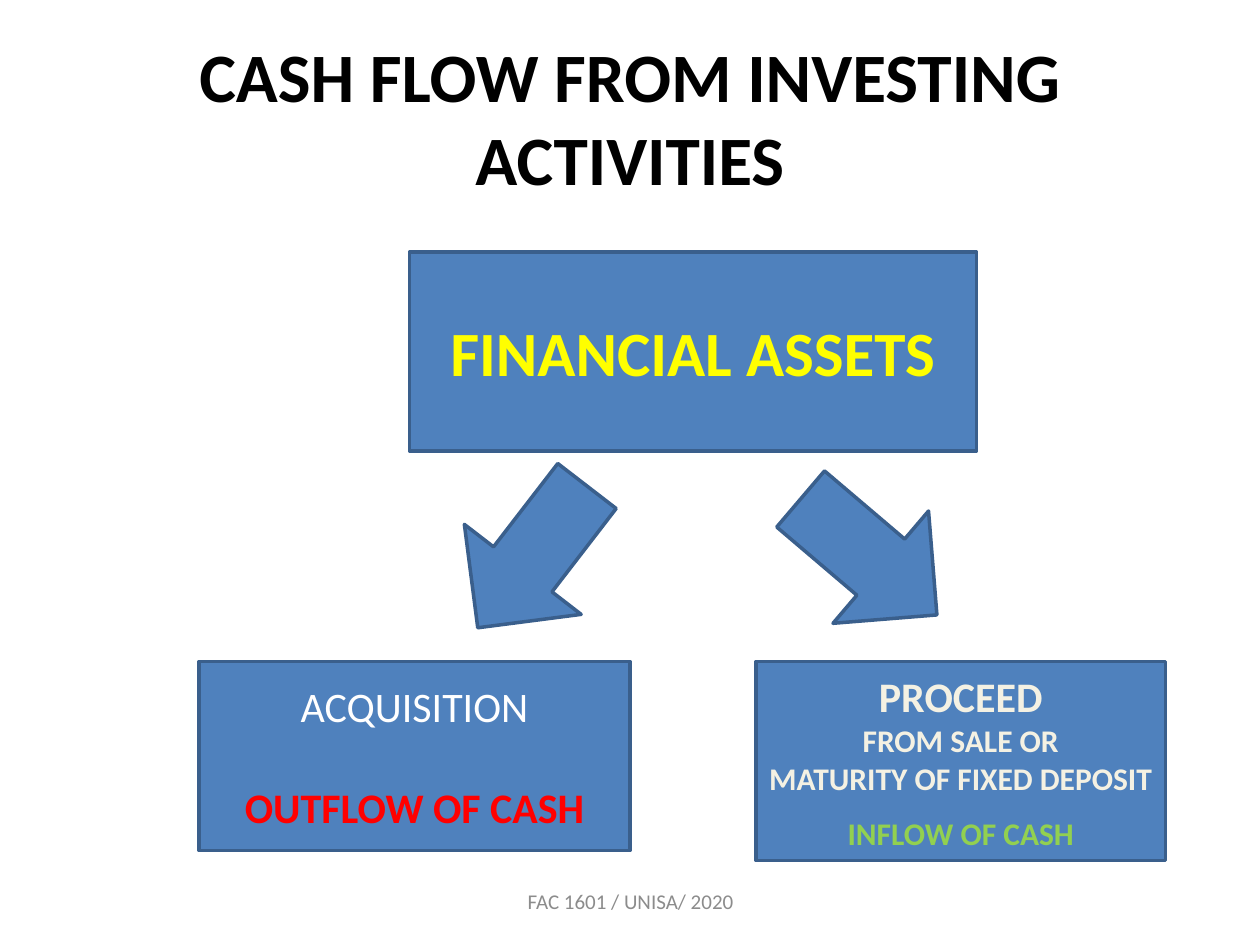
import pptx
import pptx.util
import pptx.dml.color
import pptx.enum.shapes
import pptx.enum.text

Inches = pptx.util.Inches
Pt = pptx.util.Pt
Shape = pptx.enum.shapes.MSO_SHAPE

COLORS = {
    "black": "000000",
    "grey": "8C8C8C",
    "blue": "4F81BD",
    "edge": "3A5F8C",
    "yellow": "FFFF00",
    "white": "FFFFFF",
    "cream": "F4F1E3",
    "red": "FF0000",
    "green": "92D050",
}


class SlideBuilder:
    """Holds the style and the current slide, and adds each kind of element."""

    font_name = "Calibri"
    line_width = Pt(2)

    def __init__(self, page):
        self.page = page

    def color(self, name):
        return pptx.dml.color.RGBColor.from_string(COLORS[name])

    def fill_text(self, shape, lines, inset=0.1):
        frame = shape.text_frame
        frame.word_wrap = True
        frame.vertical_anchor = pptx.enum.text.MSO_ANCHOR.MIDDLE
        frame.margin_left = frame.margin_right = Inches(inset)
        for index, (text, size, color, bold, space) in enumerate(lines):
            para = frame.add_paragraph() if index else frame.paragraphs[0]
            para.text = text
            para.alignment = pptx.enum.text.PP_ALIGN.CENTER
            if space:
                para.space_before = Pt(space)
            para.font.name = self.font_name
            para.font.size = Pt(size)
            para.font.bold = bold
            para.font.color.rgb = self.color(color)

    def text(self, place, *lines):
        box = self.page.shapes.add_textbox(*map(Inches, place))
        self.fill_text(box, lines)

    def shape(self, kind, place):
        shape = self.page.shapes.add_shape(kind, *map(Inches, place))
        shape.shadow.inherit = False
        shape.fill.solid()
        shape.fill.fore_color.rgb = self.color("blue")
        shape.line.color.rgb = self.color("edge")
        shape.line.width = self.line_width
        return shape

    def panel(self, place, *lines):
        self.fill_text(self.shape(Shape.RECTANGLE, place), lines, inset=0.05)

    def arrow(self, left, rotation):
        arrow = self.shape(Shape.DOWN_ARROW, (left, 3.71, 1.17, 1.42))
        arrow.rotation = rotation


def main():
    deck = pptx.Presentation()
    deck.slide_width, deck.slide_height = Inches(10), Inches(7.5)
    slide = SlideBuilder(deck.slides.add_slide(deck.slide_layouts[6]))

    slide.text((0.5, 0.3, 9, 1.25),
               ("CASH FLOW FROM INVESTING ACTIVITIES", 39.6, "black", True, 0))
    slide.panel((3.25, 2, 4.5, 1.58),
                ("FINANCIAL ASSETS", 36, "yellow", True, 0))
    slide.arrow(3.64, 37.6)
    slide.panel((1.58, 5.25, 3.42, 1.5),
                ("ACQUISITION", 24, "white", False, 0),
                ("OUTFLOW OF CASH", 24, "red", True, 29))
    slide.panel((6, 5.25, 3.25, 1.58),
                ("PROCEED", 24, "cream", True, 0),
                ("FROM SALE OR", 18, "cream", True, 0),
                ("MATURITY OF FIXED DEPOSIT", 18, "cream", True, 0),
                ("INFLOW OF CASH", 18, "green", True, 10))
    slide.arrow(6.31, 310.4)
    slide.text((3.42, 6.95, 3.17, 0.4),
               ("FAC 1601 / UNISA/ 2020", 12, "grey", False, 0))

    deck.save("out.pptx")


if __name__ == "__main__":
    main()
